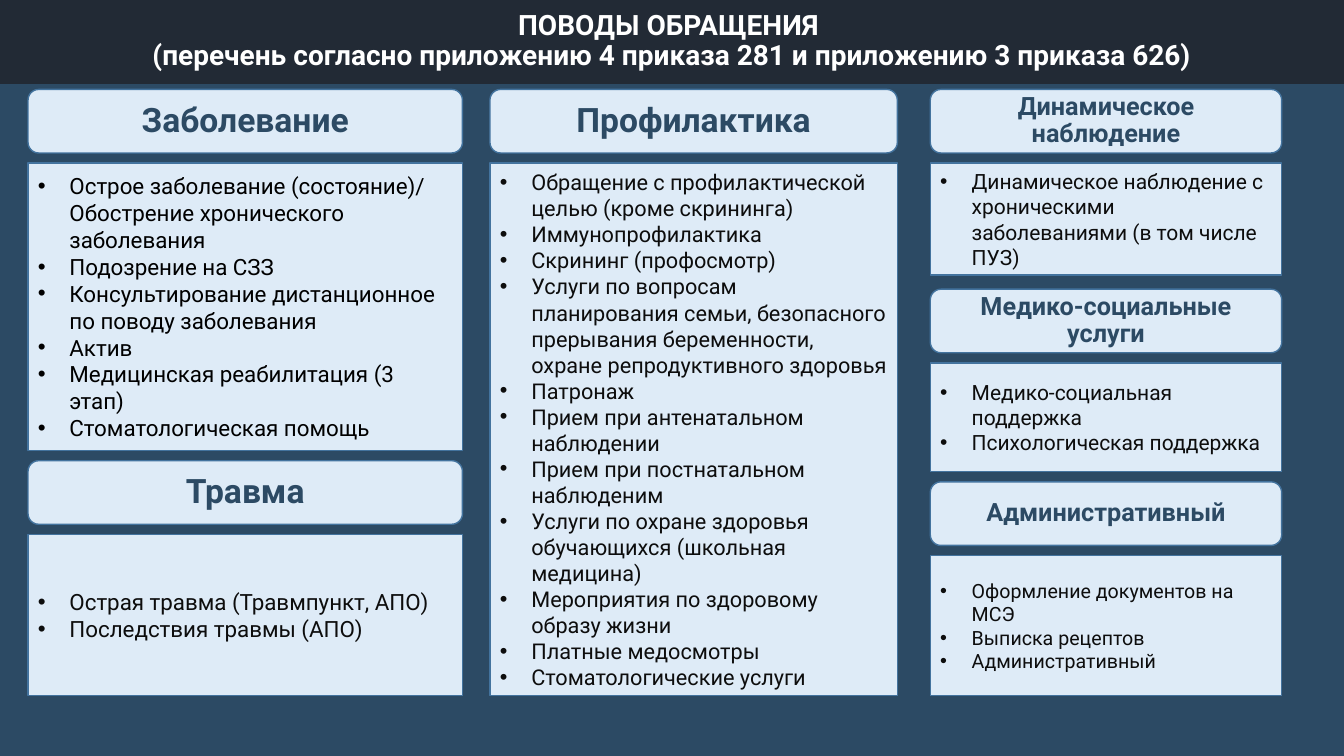
import pptx
import pptx.dml.color
import pptx.enum.shapes
import pptx.enum.text
import pptx.oxml.ns
import pptx.util
from lxml import etree

Pt = pptx.util.Pt
RGBColor = pptx.dml.color.RGBColor
SHAPE = pptx.enum.shapes.MSO_SHAPE
ALIGN = pptx.enum.text.PP_ALIGN

NAVY = RGBColor(0x2C, 0x4A, 0x64)
CHARCOAL = RGBColor(0x22, 0x2A, 0x35)
PALE = RGBColor(0xDE, 0xEB, 0xF7)
BORDER = RGBColor(0x43, 0x73, 0x9E)
WHITE = RGBColor(0xFF, 0xFF, 0xFF)
BLACK = RGBColor(0, 0, 0)
INK = RGBColor(0x0D, 0x0D, 0x0D)

FONT = "Roboto"
SLIDE_WIDTH, SLIDE_HEIGHT = 960, 540
HEADING_HEIGHT, HEADING_GAP = 45.4, 7.2
BULLET_INDENT = 22.5

TITLE = ("ПОВОДЫ ОБРАЩЕНИЯ \v"
         "(перечень согласно приложению 4 приказа 281 и приложению 3 приказа 626)")

COLUMNS = [
    (20, 310.3, 24, [
        ("Заболевание", 63.9, 321.7, 16, BLACK, [
            "Острое заболевание (состояние)/ Обострение хронического заболевания",
            "Подозрение на СЗЗ",
            "Консультирование дистанционное по поводу заболевания",
            "Актив",
            "Медицинская реабилитация (3 этап)",
            "Стоматологическая помощь"]),
        ("Травма", 329.1, 497, 16, INK, [
            "Острая травма (Травмпункт, АПО)",
            "Последствия травмы (АПО)"]),
    ]),
    (350, 291, 24, [
        ("Профилактика", 63.9, 497, 15.5, INK, [
            "Обращение с профилактической целью (кроме скрининга)",
            "Иммунопрофилактика",
            "Скрининг (профосмотр)",
            "Услуги по вопросам планирования семьи, безопасного прерывания "
            "беременности, охране репродуктивного здоровья",
            "Патронаж",
            "Прием при антенатальном наблюдении",
            "Прием при постнатальном наблюденим",
            "Услуги по охране здоровья обучающихся (школьная медицина)",
            "Мероприятия по здоровому образу жизни",
            "Платные медосмотры",
            "Стоматологические услуги"]),
    ]),
    (664.5, 251, 18, [
        ("Динамическое наблюдение", 63.9, 196.6, 15, INK, [
            "Динамическое наблюдение с хроническими заболеваниями (в том числе ПУЗ)"]),
        ("Медико-социальные услуги", 206.6, 337, 15, INK, [
            "Медико-социальная поддержка",
            "Психологическая поддержка"]),
        ("Административный", 344.2, 497, 14, INK, [
            "Оформление документов на МСЭ",
            "Выписка рецептов",
            "Административный"]),
    ]),
]


def write(frame, lines, *, size, color, bold=False, align=ALIGN.LEFT,
          spacing=None, bullets=False):
    """Fill a text frame with formatted paragraphs, centred vertically."""
    frame.word_wrap = True
    frame.auto_size = pptx.enum.text.MSO_AUTO_SIZE.NONE
    frame.vertical_anchor = pptx.enum.text.MSO_ANCHOR.MIDDLE
    for index, line in enumerate(lines):
        paragraph = frame.add_paragraph() if index else frame.paragraphs[0]
        paragraph.text = line
        paragraph.alignment = align
        if spacing:
            paragraph.line_spacing = spacing
        for run in paragraph.runs:
            run.font.name = FONT
            run.font.size = Pt(size)
            run.font.bold = bold
            run.font.color.rgb = color
        if bullets:
            add_bullet(paragraph)


def add_bullet(paragraph):
    """Give a paragraph a round bullet with a hanging indent."""
    properties = paragraph._p.get_or_add_pPr()
    properties.set("marL", str(Pt(BULLET_INDENT)))
    properties.set("indent", str(-Pt(BULLET_INDENT)))
    qn = pptx.oxml.ns.qn
    etree.SubElement(properties, qn("a:buFont"), typeface="Arial")
    etree.SubElement(properties, qn("a:buChar"), char="•")


def add_panel(slide, kind, left, top, width, height, fill, border=None):
    """Draw a flat filled shape, outlined if a border colour is given."""
    panel = slide.shapes.add_shape(kind, Pt(left), Pt(top), Pt(width), Pt(height))
    panel.shadow.inherit = False
    panel.fill.solid()
    panel.fill.fore_color.rgb = fill
    if border is None:
        panel.line.fill.background()
    else:
        panel.line.color.rgb = border
        panel.line.width = Pt(1)
    return panel


def add_header(slide, left, top, width, height):
    """Draw the dark band and set the slide title on it."""
    add_panel(slide, SHAPE.RECTANGLE, left, top, width, height, CHARCOAL)
    title = slide.shapes.title
    title.left, title.top = Pt(left + 32.4), Pt(top + 7.5)
    title.width, title.height = Pt(width - 64.8), Pt(height - 15)
    write(title.text_frame, [TITLE], size=20, color=WHITE, bold=True,
          align=ALIGN.CENTER, spacing=0.9)
    title.element.getparent().append(title.element)


def add_card(slide, left, top, width, height, heading, heading_size,
             reasons, reason_size, reason_color):
    """Draw a rounded heading with its list of reasons below."""
    offset = HEADING_HEIGHT + HEADING_GAP
    body = add_panel(slide, SHAPE.RECTANGLE, left, top + offset, width,
                     height - offset, PALE, BORDER)
    write(body.text_frame, reasons, size=reason_size, color=reason_color, bullets=True)
    header = add_panel(slide, SHAPE.ROUNDED_RECTANGLE, left, top, width,
                       HEADING_HEIGHT, PALE, BORDER)
    write(header.text_frame, [heading], size=heading_size, color=NAVY, bold=True,
          align=ALIGN.CENTER, spacing=0.9)


def main():
    """Build the slide and save it."""
    deck = pptx.Presentation()
    deck.slide_width, deck.slide_height = Pt(SLIDE_WIDTH), Pt(SLIDE_HEIGHT)
    slide = deck.slides.add_slide(deck.slide_layouts.get_by_name("Title Only"))
    slide.background.fill.solid()
    slide.background.fill.fore_color.rgb = PALE
    add_panel(slide, SHAPE.RECTANGLE, 0, 52.5, SLIDE_WIDTH, SLIDE_HEIGHT - 52.5, NAVY)
    add_header(slide, 0, -0.5, SLIDE_WIDTH, 60.5)
    for left, width, heading_size, cards in COLUMNS:
        for heading, top, bottom, size, color, reasons in cards:
            add_card(slide, left, top, width, bottom - top, heading, heading_size,
                     reasons, size, color)
    deck.save("out.pptx")


if __name__ == "__main__":
    main()
